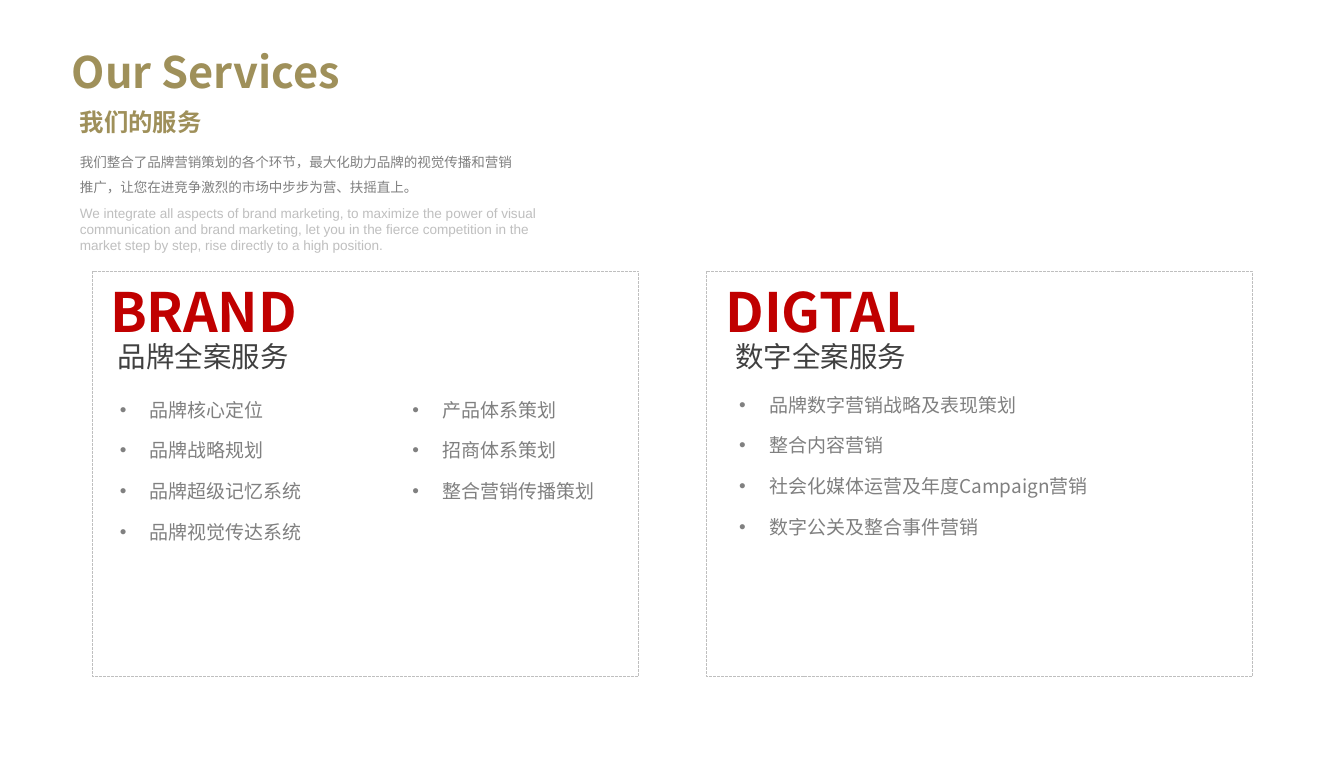
from dataclasses import dataclass
from lxml.etree import SubElement
from pptx import Presentation
from pptx.dml.color import RGBColor
from pptx.enum.dml import MSO_LINE
from pptx.enum.shapes import MSO_SHAPE
from pptx.enum.text import MSO_AUTO_SIZE
from pptx.oxml.ns import qn
from pptx.util import Inches, Pt


@dataclass(frozen=True)
class Theme:
    sans: str = "Noto Sans CJK SC"
    plain: str = "Arial"
    gold: str = "9F905A"
    red: str = "C00000"
    dark: str = "404040"
    grey: str = "808080"
    pale: str = "BFBFBF"
    white: str = "FFFFFF"
    title: int = 32
    head: int = 40
    sub: int = 21
    label: int = 18
    item: int = 14
    body: int = 10


def apply(target, form):
    for key, value in form.items():
        setattr(target, key, value)


class Page:
    def __init__(self, slide, theme):
        self.slide = slide
        self.theme = theme

    def text(self, box, lines, size, color, face=None, bold=False, form=None):
        face = face or self.theme.sans
        frame = self.slide.shapes.add_textbox(*map(Inches, box)).text_frame
        apply(frame, {"word_wrap": True, "auto_size": MSO_AUTO_SIZE.SHAPE_TO_FIT_TEXT})
        frame.text = "\n".join(lines)
        for para in frame.paragraphs:
            apply(para, form or {})
            run = para.runs[0]
            apply(run.font, {"size": Pt(size), "name": face, "bold": bold})
            run.font.color.rgb = RGBColor.from_string(color)
            SubElement(run.font._element, qn("a:ea"), typeface=face)
        return frame

    def bullets(self, box, lines):
        form = {"space_before": Pt(13.3)}
        frame = self.text(box, lines, self.theme.item, self.theme.grey, form=form)
        frame.paragraphs[0].space_before = Pt(0)
        for para in frame.paragraphs:
            props = para._p.get_or_add_pPr()
            props.set("marL", str(Inches(0.31)))
            props.set("indent", str(-Inches(0.31)))
            SubElement(props, qn("a:buFont"), typeface=self.theme.plain)
            SubElement(props, qn("a:buChar"), char="•")

    def panel(self, box):
        shape = self.slide.shapes.add_shape(MSO_SHAPE.RECTANGLE, *map(Inches, box))
        shape.shadow.inherit = False
        shape.fill.solid()
        shape.fill.fore_color.rgb = RGBColor.from_string(self.theme.white)
        shape.line.color.rgb = RGBColor.from_string(self.theme.pale)
        apply(shape.line, {"width": Pt(0.75), "dash_style": MSO_LINE.SQUARE_DOT})

    def service(self, left, head, sub, lists):
        theme = self.theme
        self.panel((left, 2.78, 5.6, 4.15))
        self.text((head[0], 2.8, 3.8, 0.77), [head[1]], theme.head, theme.red, bold=True)
        self.text((sub[0], 3.42, 2.54, 0.45), [sub[1]], theme.sub, theme.dark)
        for box, lines in lists:
            self.bullets(box, lines)


def main():
    deck = Presentation()
    apply(deck, {"slide_width": Inches(13.78), "slide_height": Inches(7.87)})
    theme = Theme()
    page = Page(deck.slides.add_slide(deck.slide_layouts[6]), theme)

    page.text((0.64, 0.41, 11.56, 0.64), ["Our Services"], theme.title, theme.gold, bold=True)
    page.text((0.72, 1.05, 6.89, 0.4), ["我们的服务"], theme.label, theme.gold, bold=True)
    page.text(
        (0.72, 1.45, 4.69, 0.6),
        ["我们整合了品牌营销策划的各个环节，最大化助力品牌的视觉传播和营销推广，"
         "让您在进竞争激烈的市场中步步为营、扶摇直上。"],
        theme.body, theme.grey, form={"line_spacing": 1.5},
    )
    page.text(
        (0.72, 2.05, 4.92, 0.6),
        ["We integrate all aspects of brand marketing, to maximize the power of visual "
         "communication and brand marketing, let you in the fierce competition in the "
         "market step by step, rise directly to a high position."],
        theme.body, theme.pale, face=theme.plain,
    )

    page.service(0.95, (1.03, "BRAND"), (1.11, "品牌全案服务"), [
        ((1.13, 4.03, 2.9, 1.75),
         ["品牌核心定位", "品牌战略规划", "品牌超级记忆系统", "品牌视觉传达系统"]),
        ((4.13, 4.03, 2.9, 1.28),
         ["产品体系策划", "招商体系策划", "整合营销传播策划"]),
    ])
    page.service(7.24, (7.34, "DIGTAL"), (7.44, "数字全案服务"), [
        ((7.48, 3.98, 5.05, 1.75),
         ["品牌数字营销战略及表现策划", "整合内容营销",
          "社会化媒体运营及年度Campaign营销", "数字公关及整合事件营销"]),
    ])
    deck.save("out.pptx")


if __name__ == "__main__":
    main()
